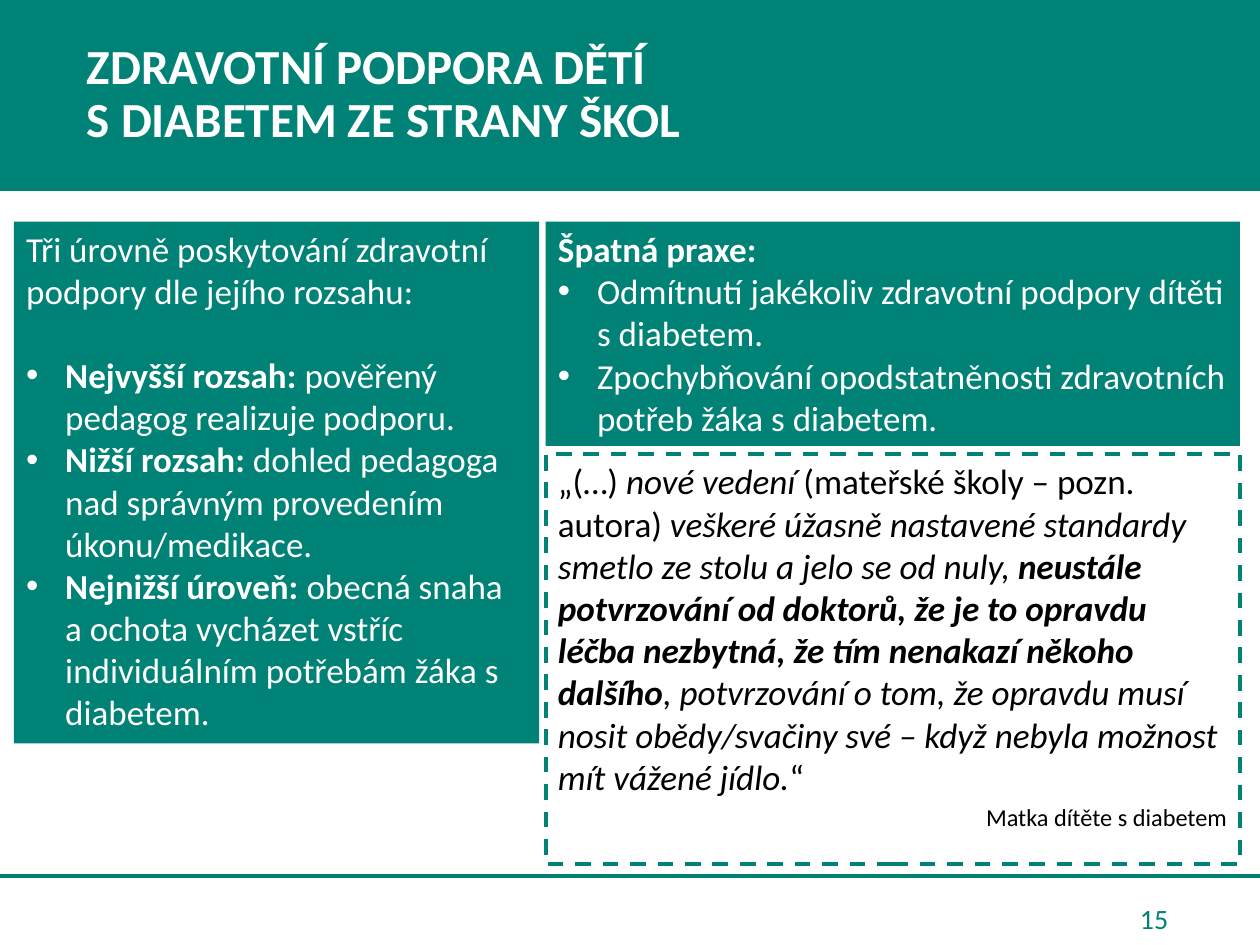
from lxml import etree
from pptx import Presentation
from pptx.dml.color import RGBColor
from pptx.enum.dml import MSO_LINE
from pptx.enum.shapes import MSO_CONNECTOR, MSO_SHAPE
from pptx.enum.text import MSO_ANCHOR, PP_ALIGN
from pptx.oxml.ns import qn
from pptx.util import Inches, Pt

RECTANGLE = MSO_SHAPE.RECTANGLE
STRAIGHT = MSO_CONNECTOR.STRAIGHT
DASH = MSO_LINE.DASH
TOP, MIDDLE = MSO_ANCHOR.TOP, MSO_ANCHOR.MIDDLE
LEFT, RIGHT = PP_ALIGN.LEFT, PP_ALIGN.RIGHT

TEAL, WHITE, BLACK = "008276", "FFFFFF", "000000"
FONT = "Calibri"
BULLET_INDENT = Inches(0.31)

SUPPORT_INTRO = "Tři úrovně poskytování zdravotní podpory dle jejího rozsahu:"
SUPPORT_LEVELS = [
    [("Nejvyšší rozsah: ", "b"), ("pověřený pedagog realizuje podporu.", "")],
    [("Nižší rozsah: ", "b"),
     ("dohled pedagoga nad správným provedením úkonu/medikace.", "")],
    [("Nejnižší úroveň: ", "b"),
     ("obecná snaha a ochota vycházet vstříc individuálním potřebám žáka s diabetem.", "")],
]
BAD_PRACTICES = [
    [("Odmítnutí jakékoliv zdravotní podpory dítěti s diabetem.", "")],
    [("Zpochybňování opodstatněnosti zdravotních potřeb žáka s diabetem.", "")],
]
QUOTE = [
    ("„(…) ", ""),
    ("nové vedení ", "i"),
    ("(mateřské školy – pozn. autora) ", ""),
    ("veškeré úžasně nastavené standardy smetlo ze stolu a jelo se od nuly, ", "i"),
    ("neustále potvrzování od doktorů, že je to opravdu léčba nezbytná, "
     "že tím nenakazí někoho dalšího", "bi"),
    (", potvrzování o tom, že opravdu musí nosit obědy/svačiny své – "
     "když nebyla možnost mít vážené jídlo.", "i"),
    ("“", ""),
]


def rgb(color):
    return RGBColor.from_string(color)


def format_run(run, size, color, style=""):
    run.font.name = FONT
    run.font.size = Pt(size)
    run.font.color.rgb = rgb(color)
    run.font.bold = "b" in style
    run.font.italic = "i" in style


def write_runs(paragraph, pieces, size, color, align=LEFT):
    paragraph.alignment = align
    for text, style in pieces:
        run = paragraph.add_run()
        run.text = text
        format_run(run, size, color, style)


def add_bullet(paragraph):
    properties = paragraph._p.get_or_add_pPr()
    properties.set("marL", str(BULLET_INDENT))
    properties.set("indent", str(-BULLET_INDENT))
    etree.SubElement(properties, qn("a:buFont")).set("typeface", "Arial")
    etree.SubElement(properties, qn("a:buChar")).set("char", "•")


def add_box(slide, box, fill=None, line_width=0):
    panel = slide.shapes.add_shape(RECTANGLE, *map(Inches, box))
    panel.shadow.inherit = False
    if fill:
        panel.fill.solid()
        panel.fill.fore_color.rgb = rgb(fill)
    else:
        panel.fill.background()
    if line_width:
        panel.line.color.rgb = rgb(TEAL)
        panel.line.width = Pt(line_width)
    else:
        panel.line.fill.background()
    panel.text_frame.word_wrap = True
    panel.text_frame.vertical_anchor = TOP
    return panel


def add_header(slide, box):
    left, top, width, height = box
    add_box(slide, (left, top, width + 0.04, height), TEAL, 1)
    title = slide.shapes.add_textbox(*map(Inches, box))
    frame = title.text_frame
    frame.word_wrap = True
    frame.vertical_anchor = MIDDLE
    frame.margin_left = Inches(0.69)
    heading = frame.paragraphs[0]
    heading.text = "ZDRAVOTNÍ PODPORA DĚTÍ\nS DIABETEM ZE STRANY ŠKOL"
    heading.line_spacing = 0.9
    for run in heading.runs:
        format_run(run, 28, WHITE, "b")


def add_bullet_panel(slide, box, intro, items, gap=0):
    frame = add_box(slide, box, TEAL).text_frame
    opening = frame.paragraphs[0]
    write_runs(opening, [intro], 20, WHITE)
    opening.space_after = Pt(gap)
    for pieces in items:
        paragraph = frame.add_paragraph()
        add_bullet(paragraph)
        write_runs(paragraph, pieces, 20, WHITE)


def add_quote(slide, box):
    panel = add_box(slide, box, line_width=2.25)
    panel.line.dash_style = DASH
    frame = panel.text_frame
    write_runs(frame.paragraphs[0], QUOTE, 20.1, BLACK)
    speaker = frame.add_paragraph()
    write_runs(speaker, [("Matka dítěte s diabetem", "")], 13.9, BLACK, RIGHT)
    speaker.line_spacing = 0.7
    speaker.space_before = Pt(7.5)


def add_footer(slide, box):
    left, top, width, height = map(Inches, box)
    rule = slide.shapes.add_connector(STRAIGHT, left, top, left + width, top)
    rule.line.color.rgb = rgb(TEAL)
    rule.line.width = Pt(2.25)
    etree.SubElement(rule._element.spPr, qn("a:effectLst"))
    number = slide.shapes.add_textbox(
        Inches(7.08), top + Inches(0.14), Inches(2.29), Inches(0.4))
    number.text_frame.word_wrap = True
    number.text_frame.vertical_anchor = MIDDLE
    write_runs(number.text_frame.paragraphs[0], [("15", "")], 16, TEAL, RIGHT)


def main():
    presentation = Presentation()
    presentation.slide_width = Inches(10)
    presentation.slide_height = Inches(7.5)
    slide = presentation.slides.add_slide(presentation.slide_layouts[6])
    add_footer(slide, (-0.03, 6.95, 10.07, 0.55))
    add_header(slide, (0, 0, 10, 1.51))
    add_quote(slide, (4.33, 3.6, 5.51, 3.26))
    add_bullet_panel(slide, (4.33, 1.76, 5.51, 1.78),
                     ("Špatná praxe:", "b"), BAD_PRACTICES)
    add_bullet_panel(slide, (0.11, 1.76, 4.17, 4.14),
                     (SUPPORT_INTRO, ""), SUPPORT_LEVELS, gap=24)
    presentation.save("out.pptx")


if __name__ == "__main__":
    main()
